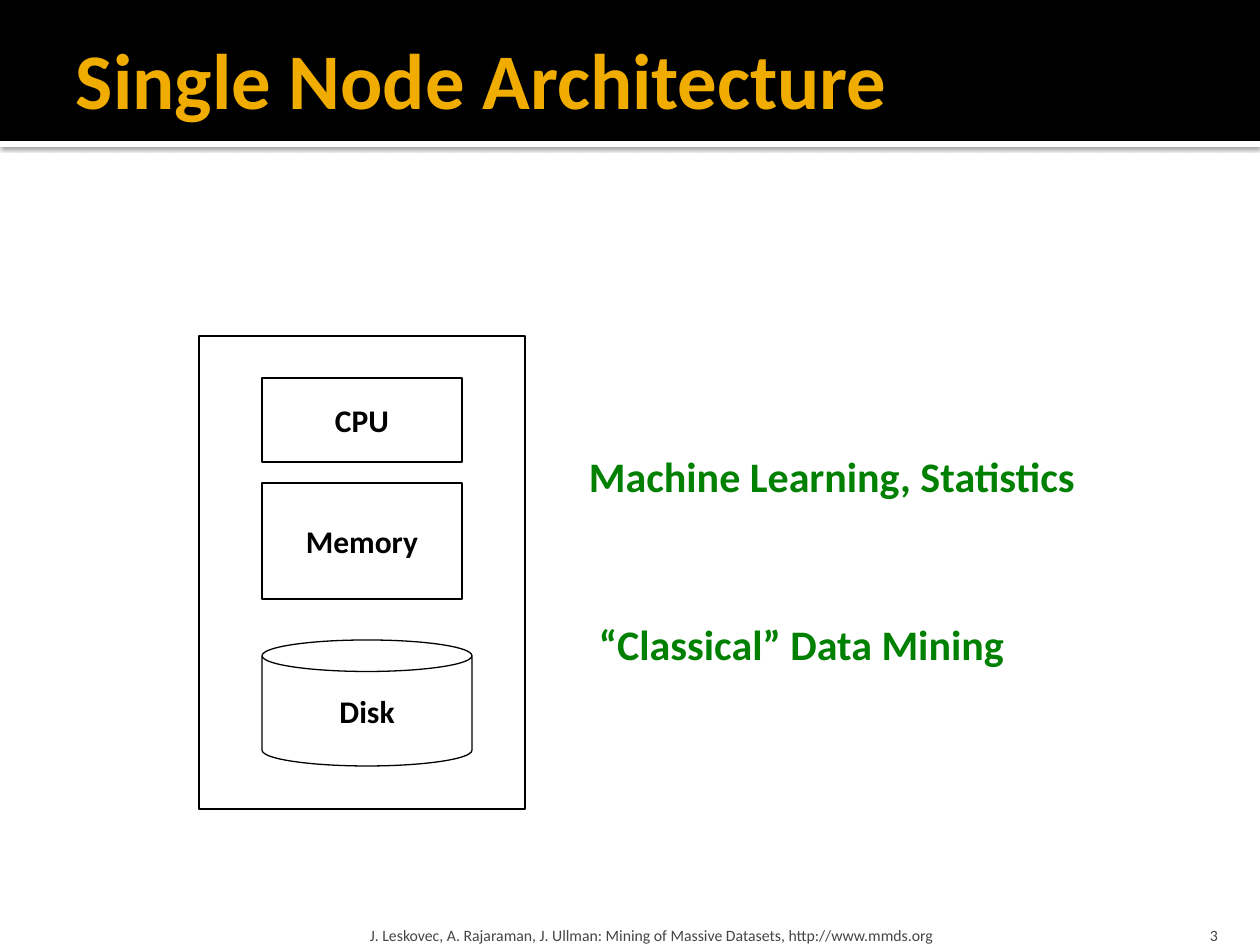
"""Build the Single Node Architecture slide."""
import pptx
import pptx.dml.color
import pptx.enum.shapes
import pptx.enum.text
import pptx.oxml
import pptx.util

SHAPE = pptx.enum.shapes.MSO_SHAPE
ALIGN = pptx.enum.text.PP_ALIGN
ANCHOR = pptx.enum.text.MSO_ANCHOR
COLORS = {"black": "000000", "white": "FFFFFF", "gold": "F0AD00", "green": "008000", "gray": "454545"}
FONT = "Calibri"
PX_PER_INCH = 126
SHADOW = (
    '<a:effectLst xmlns:a="http://schemas.openxmlformats.org/drawingml/2006/main">'
    '<a:outerShdw blurRad="31750" dist="10160" dir="5400000" algn="tl" rotWithShape="0">'
    '<a:srgbClr val="000000"><a:alpha val="60000"/></a:srgbClr>'
    "</a:outerShdw></a:effectLst>"
)


class SlideBuilder:
    def __init__(self, prs):
        self.s = prs.slides.add_slide(prs.slide_layouts[5])

    def emu(self, box):
        return [pptx.util.Emu(round(v * 914400 / PX_PER_INCH)) for v in box]

    def color(self, name):
        return pptx.dml.color.RGBColor.from_string(COLORS[name])

    def set_text(self, sp, text, size, color, bold=True, align=ALIGN.LEFT,
                 anchor=ANCHOR.MIDDLE, wrap=False, insets=(13, 6, 13, 6)):
        tf = sp.text_frame
        tf.text = text
        tf.word_wrap = wrap
        tf.auto_size = pptx.enum.text.MSO_AUTO_SIZE.NONE
        tf.vertical_anchor = anchor
        tf.margin_left, tf.margin_top, tf.margin_right, tf.margin_bottom = self.emu(insets)
        p = tf.paragraphs[0]
        p.alignment = align
        p.font.name, p.font.size, p.font.bold = FONT, pptx.util.Pt(size), bold
        p.font.color.rgb = self.color(color)

    def bar(self, box, color, shadow=False):
        sp = self.s.shapes.add_shape(SHAPE.RECTANGLE, *self.emu(box))
        sp.fill.solid()
        sp.fill.fore_color.rgb = self.color(color)
        sp.line.fill.background()
        if shadow:
            sp._element.spPr.append(pptx.oxml.parse_xml(SHADOW))
        else:
            sp.shadow.inherit = False

    def title(self, box, text):
        sp = self.s.shapes.title
        sp.left, sp.top, sp.width, sp.height = self.emu(box)
        self.set_text(sp, text, 45, "gold", wrap=True, insets=(13, 6, 6, 6))
        self.s.shapes._spTree.append(sp._element)

    def outline(self, kind, box, text=""):
        sp = self.s.shapes.add_shape(kind, *self.emu(box))
        sp.shadow.inherit = False
        sp.fill.background()
        sp.line.color.rgb = self.color("black")
        sp.line.width = pptx.util.Pt(0.75)
        if text:
            self.set_text(sp, text, 18, "black", align=ALIGN.CENTER)

    def text(self, box, text, size, color, **style):
        self.set_text(self.s.shapes.add_textbox(*self.emu(box)), text, size, color, **style)


def main():
    prs = pptx.Presentation()
    prs.slide_width, prs.slide_height = pptx.util.Inches(10), pptx.util.Inches(7.5)
    b = SlideBuilder(prs)

    b.bar((0, 141, 1260, 6), "white", shadow=True)
    b.bar((0, 0, 1260, 141), "black")
    b.title((63, 10, 1134, 136), "Single Node Architecture")

    b.outline(SHAPE.RECTANGLE, (262, 483, 200, 116), "Memory")
    b.outline(SHAPE.CAN, (262, 640, 210, 126), "Disk")
    b.outline(SHAPE.RECTANGLE, (262, 378, 200, 84), "CPU")
    b.outline(SHAPE.RECTANGLE, (199, 336, 326, 473))

    b.text((576, 445, 544, 63), "Machine Learning, Statistics", 24, "green", anchor=ANCHOR.TOP)
    b.text((586, 613, 452, 63), "“Classical” Data Mining", 24, "green", anchor=ANCHOR.TOP)

    footer = {"bold": False, "anchor": ANCHOR.BOTTOM, "wrap": True}
    b.text((364, 907, 759, 38),
           "J. Leskovec, A. Rajaraman, J. Ullman: Mining of Massive Datasets, http://www.mmds.org",
           9, "gray", insets=(6, 6, 6, 0), **footer)
    b.text((1130, 907, 101, 38), "3", 9, "gray", align=ALIGN.RIGHT, insets=(13, 6, 13, 0), **footer)

    prs.save("out.pptx")


if __name__ == "__main__":
    main()
